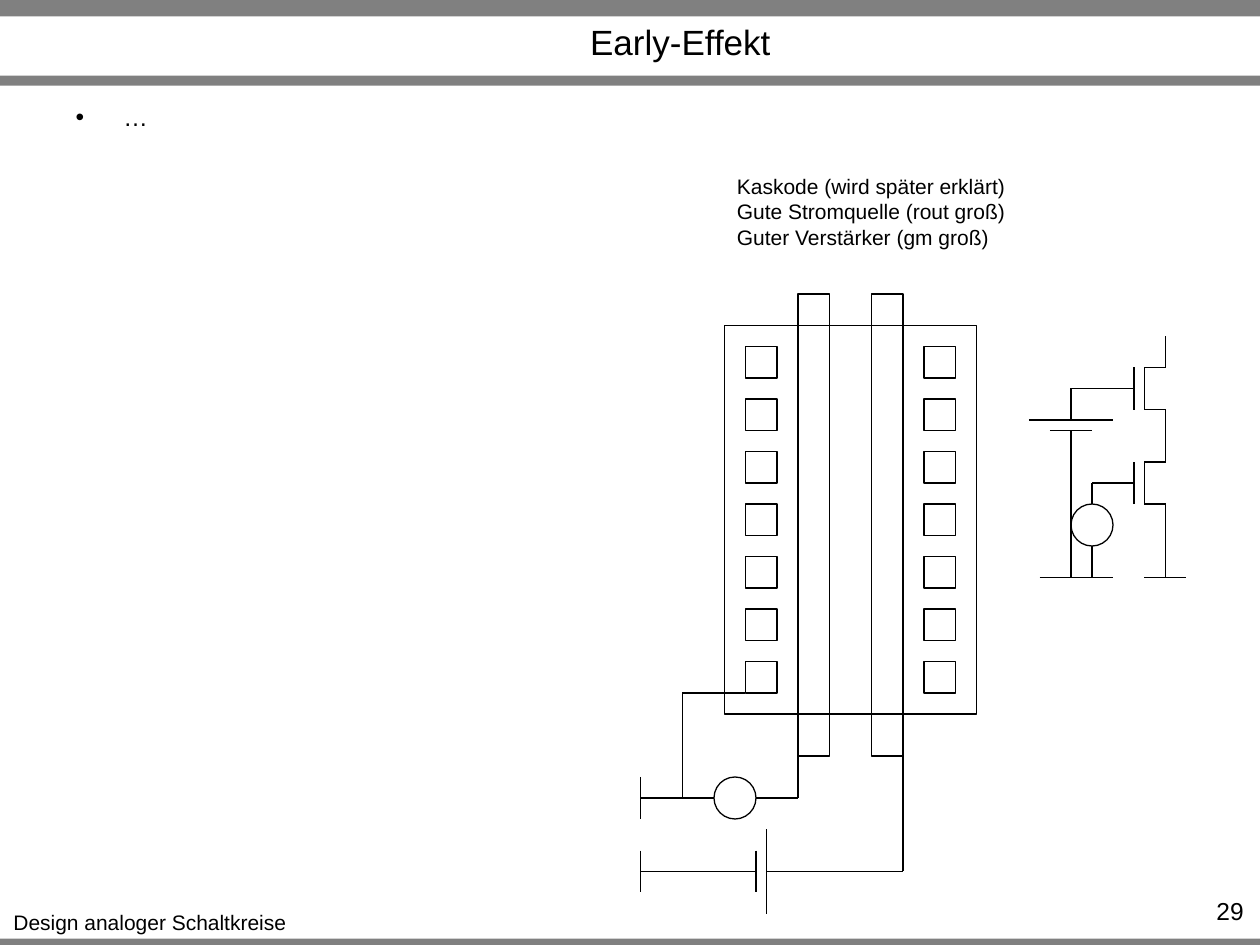
from typing import NamedTuple

import pptx
import pptx.dml.color
import pptx.enum.shapes
import pptx.enum.text
import pptx.oxml.ns
import pptx.util
from lxml import etree
from pptx.util import Inches

COLORS = {"bar": "808080", "ink": "000000"}
FONT = "Arial"
GRID = 1 / 12  # the drawing sits on a grid of twelfths of an inch
SHAPE = pptx.enum.shapes.MSO_SHAPE
ALIGN = pptx.enum.text.PP_ALIGN
AUTO_SIZE = pptx.enum.text.MSO_AUTO_SIZE


class Box(NamedTuple):
    left: float
    top: float
    width: float
    height: float


class Wire(NamedTuple):
    x1: int
    y1: int
    x2: int
    y2: int


class Label(NamedTuple):
    text: str
    box: Box
    size: int
    align: ALIGN
    wrap: bool


BARS = [Box(0, 7.45, 10, 0.08), Box(0, 0, 10, 0.13), Box(0, 0.6, 10, 0.08)]

LABELS = [
    Label("Design analoger Schaltkreise", Box(0, 7.17, 2.38, 0.3), 12, ALIGN.CENTER, False),
    Label("29", Box(9.1, 7.06, 0.87, 0.24), 14, ALIGN.RIGHT, True),
    Label("Kaskode (wird später erklärt)\nGute Stromquelle (rout groß)\n"
          "Guter Verstärker (gm groß)", Box(5.75, 1.33, 2.35, 0.71), 12, ALIGN.LEFT, False),
]

# Everything below is in grid units
DIFFUSION = Box(69, 31, 24, 37)
GATES = [Box(left, 28, 3, 44) for left in (76, 83)]
CONTACTS = [Box(left, 33 + 5 * row, 3, 3) for row in range(7) for left in (71, 88)]
SOURCES = [Box(68, 74, 4, 4), Box(102, 48, 4, 4)]

LAYOUT_WIRES = [
    Wire(73, 83, 86, 83), Wire(86, 72, 86, 83),  # second gate to battery
    Wire(71, 66, 65, 66), Wire(65, 66, 65, 76),  # contact to source
    Wire(61, 76, 68, 76), Wire(61, 74, 61, 78),
    Wire(61, 83, 72, 83), Wire(61, 81, 61, 85),
    Wire(72, 76, 76, 76), Wire(76, 72, 76, 76),  # first gate to source
]
CIRCUIT_WIRES = [
    Wire(104, 48, 104, 46), Wire(106, 46, 104, 46), Wire(104, 55, 104, 52),
    Wire(99, 55, 106, 55), Wire(109, 55, 113, 55), Wire(111, 55, 111, 51),
    Wire(106, 37, 102, 37), Wire(102, 37, 102, 40), Wire(102, 41, 102, 55),
]
BATTERIES = [
    [Wire(72, 81, 72, 85), Wire(73, 79, 73, 87)],
    [Wire(100, 41, 104, 41), Wire(98, 40, 106, 40)],
]
# Relative to the drain-source column and the height of the gate
TRANSISTOR = [
    Wire(0, 2, -2, 2), Wire(-2, 2, -2, -2), Wire(-5, 0, -3, 0), Wire(-3, 2, -3, -2),
    Wire(0, -2, -2, -2), Wire(0, -2, 0, -5), Wire(0, 5, 0, 2),
]


def color(name: str) -> pptx.dml.color.RGBColor:
    return pptx.dml.color.RGBColor.from_string(COLORS[name])


def place(shape, box: Box) -> None:
    shape.left, shape.top, shape.width, shape.height = map(Inches, box)


def format_text(text_frame, size: int, align: ALIGN) -> None:
    for paragraph in text_frame.paragraphs:
        paragraph.alignment = align
        for run in paragraph.runs:
            run.font.name = FONT
            run.font.size = pptx.util.Pt(size)
            run.font.color.rgb = color("ink")


def draw_bar(shapes, box: Box) -> None:
    bar = shapes.add_shape(SHAPE.RECTANGLE, *map(Inches, box))
    bar.shadow.inherit = False
    bar.fill.solid()
    bar.fill.fore_color.rgb = color("bar")
    bar.line.fill.background()


def draw_label(shapes, label: Label) -> None:
    text_frame = shapes.add_textbox(*map(Inches, label.box)).text_frame
    text_frame.text = label.text
    text_frame.word_wrap = label.wrap
    text_frame.auto_size = AUTO_SIZE.NONE if label.wrap else AUTO_SIZE.SHAPE_TO_FIT_TEXT
    format_text(text_frame, label.size, label.align)


def draw_outline(shapes, box: Box, kind: SHAPE = SHAPE.RECTANGLE) -> None:
    outline = shapes.add_shape(kind, *(Inches(value * GRID) for value in box))
    outline.shadow.inherit = False
    outline.fill.background()
    outline.line.color.rgb = color("ink")
    outline.line.width = pptx.util.Pt(0.75)


def draw_wires(shapes, wires: list[Wire], x: int = 0, y: int = 0) -> None:
    for wire in wires:
        ends = (wire.x1 + x, wire.y1 + y, wire.x2 + x, wire.y2 + y)
        connector = shapes.add_connector(pptx.enum.shapes.MSO_CONNECTOR.STRAIGHT,
                                         *(Inches(value * GRID) for value in ends))
        connector.line.color.rgb = color("ink")
        connector.line.width = pptx.util.Pt(0.75)
        etree.SubElement(connector._element.spPr, pptx.oxml.ns.qn("a:effectLst"))


def fill_placeholders(slide) -> None:
    title = slide.shapes.title
    place(title, Box(1.3, 0.14, 8.2, 0.38))
    title.text_frame.text = "Early-Effekt"
    title.text_frame.auto_size = AUTO_SIZE.NONE
    title.text_frame.vertical_anchor = pptx.enum.text.MSO_ANCHOR.MIDDLE
    format_text(title.text_frame, 20, ALIGN.CENTER)

    body = slide.placeholders[1]
    place(body, Box(0.5, 0.76, 9, 0.49))
    body.text_frame.text = "…"
    body.text_frame.auto_size = AUTO_SIZE.NONE
    paragraph = body.text_frame.paragraphs[0]
    paragraph.space_before = pptx.util.Pt(0)
    properties = paragraph._p.get_or_add_pPr()
    properties.set("marL", str(Inches(0.38)))
    properties.set("indent", str(-Inches(0.38)))
    etree.SubElement(properties, pptx.oxml.ns.qn("a:buChar"), char="•")
    format_text(body.text_frame, 14, ALIGN.LEFT)


def main() -> None:
    presentation = pptx.Presentation()
    presentation.slide_width = Inches(10)
    presentation.slide_height = Inches(7.5)
    slide = presentation.slides.add_slide(presentation.slide_layouts[1])
    shapes = slide.shapes

    # Frame and text
    for bar in BARS:
        draw_bar(shapes, bar)
    fill_placeholders(slide)
    for label in LABELS:
        draw_label(shapes, label)

    # Transistor layout and voltage sources
    for box in [DIFFUSION, *GATES, *CONTACTS]:
        draw_outline(shapes, box)
    for box in SOURCES:
        draw_outline(shapes, box, SHAPE.OVAL)

    # Wiring, with batteries and transistors as groups
    draw_wires(shapes, LAYOUT_WIRES + CIRCUIT_WIRES)
    for battery in BATTERIES:
        draw_wires(shapes.add_group_shape().shapes, battery)
    for gate_height in (46, 37):
        draw_wires(shapes.add_group_shape().shapes, TRANSISTOR, 111, gate_height)

    presentation.save("out.pptx")


if __name__ == "__main__":
    main()
